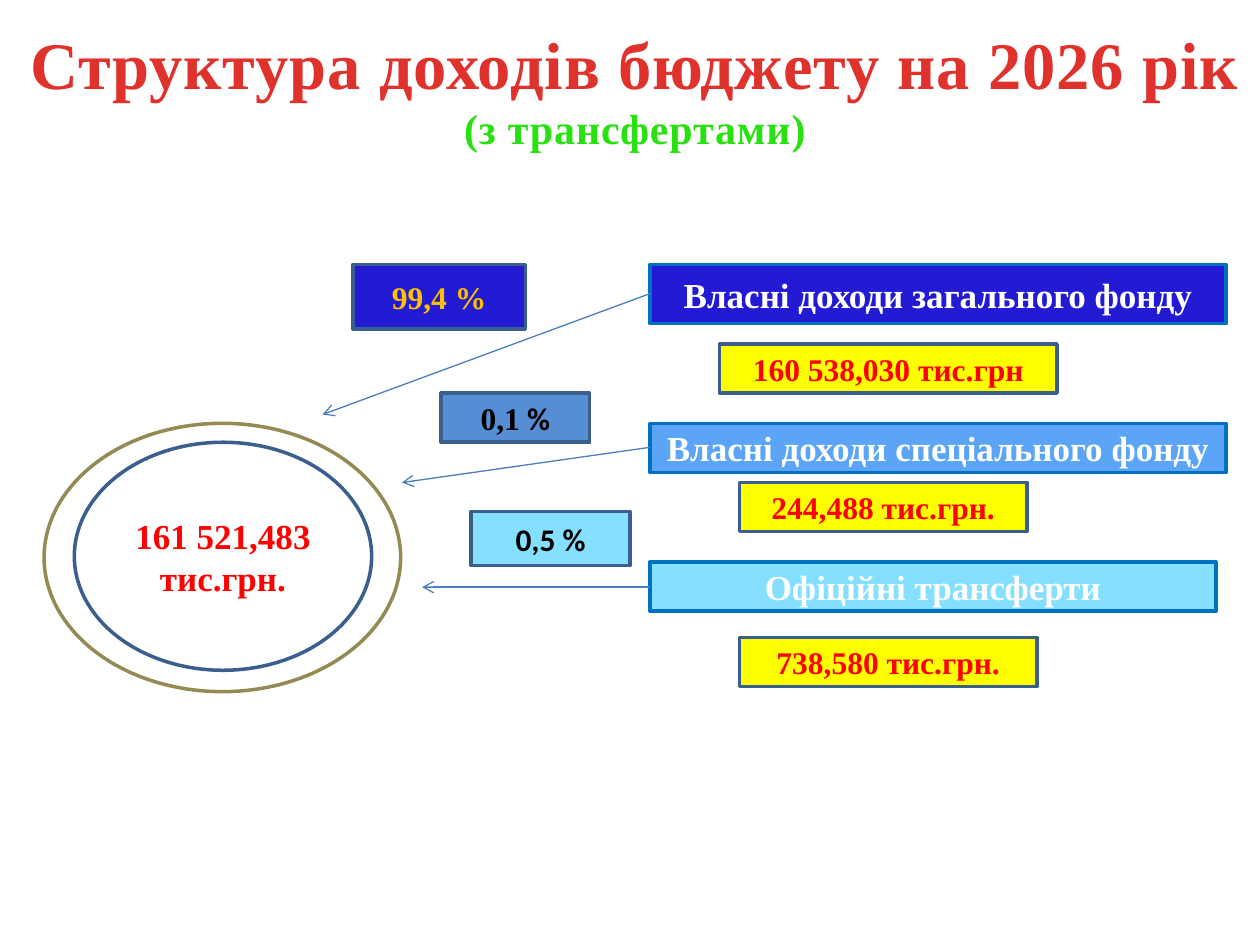
from lxml import etree
from pptx import Presentation
from pptx.dml.color import RGBColor
from pptx.enum.shapes import MSO_CONNECTOR, MSO_SHAPE
from pptx.enum.text import MSO_ANCHOR, MSO_AUTO_SIZE, PP_ALIGN
from pptx.oxml.ns import qn
from pptx.util import Inches, Pt

RECT, OVAL = MSO_SHAPE.RECTANGLE, MSO_SHAPE.OVAL
STRAIGHT = MSO_CONNECTOR.STRAIGHT
TOP, MIDDLE = MSO_ANCHOR.TOP, MSO_ANCHOR.MIDDLE
CENTER = PP_ALIGN.CENTER
NO_FIT = MSO_AUTO_SIZE.NONE

SERIF, SANS = "Times New Roman", "Calibri"
NAVY, SKY, AQUA = "231AD4", "5CA5F6", "85DFFF"
WHITE, RED, YELLOW = "FFFFFF", "FF0000", "FFFF00"
EDGE, BLUE = "3A5F8C", "0070C0"


def color(code):
    return RGBColor.from_string(code)


def write(para, text, font=SERIF, size=18, ink=RED, space=0):
    para.alignment = CENTER
    run = para.add_run()
    run.text = text
    run.font.name = font
    run.font.size = Pt(size)
    run.font.bold = True
    run.font.color.rgb = color(ink)
    if space:
        run.font._element.set("spc", str(int(space * 100)))


class Board:
    """Draw the elements of one slide in a shared style."""

    def __init__(self, deck):
        self.slide = deck.slides.add_slide(deck.slide_layouts[5])
        self.shapes = self.slide.shapes

    def title(self, box, lines):
        head = self.shapes.title
        head.left, head.top, head.width, head.height = map(Inches, box)
        frame = head.text_frame
        frame.auto_size = NO_FIT
        frame.vertical_anchor = TOP
        for i, (text, size, ink) in enumerate(lines):
            para = frame.add_paragraph() if i else frame.paragraphs[0]
            write(para, text, size=size, ink=ink, space=0.5)

    def shape(self, kind, box, fill=None, edge=EDGE, runs=(), **style):
        item = self.shapes.add_shape(kind, *map(Inches, box))
        item.shadow.inherit = False
        if fill:
            item.fill.solid()
            item.fill.fore_color.rgb = color(fill)
        else:
            item.fill.background()
        item.line.color.rgb = color(edge)
        item.line.width = Pt(2)
        frame = item.text_frame
        frame.word_wrap = True
        frame.vertical_anchor = MIDDLE
        for text, font in runs:
            write(frame.paragraphs[0], text, font=font, **style)

    def arrow(self, start, end):
        item = self.shapes.add_connector(STRAIGHT, *map(Inches, start + end))
        item.line.color.rgb = color("4B7EBC")
        item.line.width = Pt(0.75)
        line = item.line._get_or_add_ln()
        etree.SubElement(line, qn("a:tailEnd"), type="arrow")
        etree.SubElement(item._element.spPr, qn("a:effectLst"))


def main():
    deck = Presentation()
    deck.slide_width, deck.slide_height = Inches(10), Inches(7.5)
    board = Board(deck)
    board.title((0.04, 0.13, 10, 1.14), [
        ("Структура доходів бюджету на 2026 рік", 38, "E0322D"),
        ("(з трансфертами)", 24, "29E010"),
    ])

    board.shape(OVAL, (0.59, 3.51, 2.36, 1.81), size=20,
                runs=[("161 521,483 тис.грн.", SERIF)])
    board.shape(OVAL, (0.35, 3.36, 2.83, 2.13), edge="948A54")

    funds = [
        ("Власні доходи загального фонду", 2.1, 4.57, 0.47, NAVY),
        ("Власні доходи спеціального фонду", 3.36, 4.57, 0.39, SKY),
        ("Офіційні трансферти", 4.46, 4.49, 0.39, AQUA),
    ]
    for text, top, width, height, fill in funds:
        board.shape(RECT, (5.16, top, width, height), fill, BLUE,
                    [(text, SERIF)], size=20, ink=WHITE)

    sums = [
        ("244,488 тис.грн.", 5.87, 3.83, 2.28),
        ("738,580 тис.грн.", 5.87, 5.06, 2.36),
        ("160 538,030 тис.грн", 5.71, 2.73, 2.68),
    ]
    for text, left, top, width in sums:
        board.shape(RECT, (left, top, width, 0.39), YELLOW,
                    runs=[(text, SERIF)])

    for start, end in [(2.33, (2.56, 3.29)), (3.55, (3.19, 3.83)),
                       (4.66, (3.35, 4.66))]:
        board.arrow((5.16, start), end)

    shares = [
        ([("99,4 %", SERIF)], (2.8, 2.1, 1.37, 0.51), NAVY, "FFC000"),
        ([("0,1", SERIF), (" %", SANS)], (3.5, 3.12, 1.18, 0.39),
         "558ED5", "000000"),
        ([("0,5 %", SANS)], (3.74, 4.06, 1.26, 0.43), AQUA, "000000"),
    ]
    for runs, box, fill, ink in shares:
        board.shape(RECT, box, fill, runs=runs, ink=ink)

    deck.save("out.pptx")


if __name__ == "__main__":
    main()
